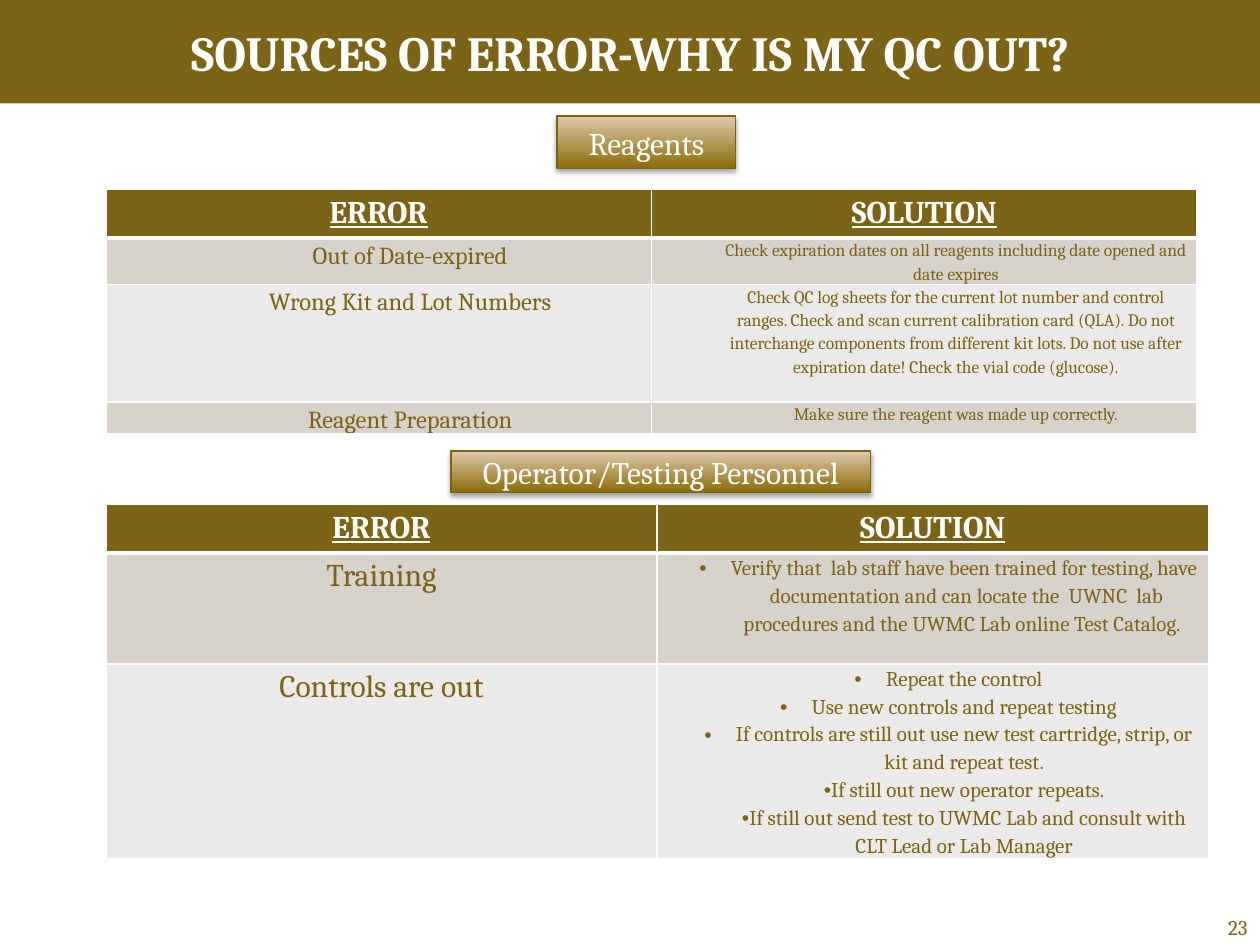
from dataclasses import dataclass

from lxml.etree import SubElement
from pptx import Presentation
from pptx.dml.color import RGBColor
from pptx.enum.shapes import MSO_SHAPE
from pptx.enum.text import MSO_ANCHOR, PP_ALIGN
from pptx.oxml import parse_xml
from pptx.oxml.ns import nsdecls, qn
from pptx.util import Inches, Pt

FONT = "Cambria"
BRONZE = RGBColor(0x7C, 0x63, 0x16)
OUTLINE = RGBColor(0x7C, 0x62, 0x13)
GRADIENT_DARK = RGBColor(0x8B, 0x6B, 0x07)
GRADIENT_LIGHT = RGBColor(0xDE, 0xC9, 0xAB)
BAND_DARK = RGBColor(0xD7, 0xD3, 0xCC)
BAND_LIGHT = RGBColor(0xEC, 0xEA, 0xE8)
WHITE = RGBColor(0xFF, 0xFF, 0xFF)


@dataclass
class Label:
    text: str
    left: float
    top: float
    width: float
    height: float


@dataclass
class Entry:
    lines: list[str]
    size: int
    indent: float = 0.5
    bulleted: bool = False
    hanging: int = 0  # how many leading bullets hang outside their text


@dataclass
class ErrorTable:
    top: float
    width: float
    heights: list[float]
    rows: list[tuple[Entry, Entry]]


LABELS = [
    Label("Reagents", 4.42, 0.92, 1.42, 0.42),
    Label("Operator/Testing Personnel", 3.58, 3.58, 3.33, 0.33),
]

TABLES = [
    ErrorTable(1.5, 8.66, [0.38, 0.37, 0.93, 0.25], [
        (Entry(["Out of Date-expired"], 14),
         Entry(["Check expiration dates on all reagents including date opened "
                "and date expires"], 10)),
        (Entry(["Wrong Kit and Lot Numbers"], 14),
         Entry(["Check QC log sheets for the current lot number and control "
                "ranges. Check and scan current calibration card (QLA). Do not "
                "interchange components from different kit lots. Do not use "
                "after expiration date! Check the vial code (glucose)."], 10)),
        (Entry(["Reagent Preparation"], 14),
         Entry(["Make sure the reagent was made up correctly."], 10)),
    ]),
    ErrorTable(4, 8.75, [0.38, 0.88, 1.55], [
        (Entry(["Training"], 18, indent=0),
         Entry(["Verify that  lab staff have been trained for testing, have  "
                "documentation and can locate the  UWNC  lab procedures and "
                "the UWMC Lab online Test Catalog. "],
               12, bulleted=True, hanging=1)),
        (Entry(["Controls are out"], 18, indent=0),
         Entry(["Repeat the control",
                "Use new controls and repeat testing",
                "If controls are still out use new test cartridge, strip, or "
                "kit and repeat test.",
                "If still out new operator repeats.",
                "If still out send test to UWMC Lab and consult with CLT Lead "
                "or Lab Manager"],
               12, bulleted=True, hanging=3)),
    ]),
]


def style(paragraph, size: int, color: RGBColor, bold: bool = False,
          underline: bool = False, align=PP_ALIGN.CENTER) -> None:
    paragraph.alignment = align
    for run in paragraph.runs:
        font = run.font
        font.name, font.size = FONT, Pt(size)
        font.bold, font.underline = bold, underline
        font.color.rgb = color


def set_insets(frame, left: float, top: float, right: float, bottom: float) -> None:
    frame.margin_left, frame.margin_top = Inches(left), Inches(top)
    frame.margin_right, frame.margin_bottom = Inches(right), Inches(bottom)


def paint_cell(cell, fill: RGBColor, top: int = 1, bottom: int = 1) -> None:
    """Fill the cell and give it white borders, widths in points."""
    cell.fill.solid()
    cell.fill.fore_color.rgb = fill
    properties = cell._tc.get_or_add_tcPr()
    widths = {"lnL": 1, "lnR": 1, "lnT": top, "lnB": bottom}
    for index, (tag, width) in enumerate(widths.items()):
        properties.insert(index, parse_xml(
            f'<a:{tag} {nsdecls("a")} w="{Pt(width)}"><a:solidFill>'
            f'<a:srgbClr val="{WHITE}"/></a:solidFill></a:{tag}>'))


def write_entry(cell, entry: Entry) -> None:
    set_insets(cell, 0.07, 0, 0.07, 0)
    cell.text_frame.text = "\n".join(entry.lines)
    for index, paragraph in enumerate(cell.text_frame.paragraphs):
        properties = paragraph._p.get_or_add_pPr()
        hang = 0.25 if index < entry.hanging else 0
        properties.set("marL", str(Inches(entry.indent)))
        properties.set("indent", str(-Inches(hang)))
        if entry.bulleted:
            SubElement(properties, qn("a:buFont"), typeface="Arial")
            SubElement(properties, qn("a:buChar"), char="•")
        paragraph.line_spacing = 1.15
        style(paragraph, entry.size, BRONZE)


def draw_table(slide, spec_table: ErrorTable) -> None:
    heights = spec_table.heights
    table = slide.shapes.add_table(
        len(heights), 2, Inches(0.84), Inches(spec_table.top),
        Inches(spec_table.width), Inches(sum(heights))).table
    table.horz_banding = False
    for row, height in zip(table.rows, heights):
        row.height = Inches(height)
    for column, heading in enumerate(("ERROR", "SOLUTION")):
        cell = table.cell(0, column)
        cell.text_frame.text = heading
        style(cell.text_frame.paragraphs[0], 18, WHITE, bold=True, underline=True)
        paint_cell(cell, BRONZE, bottom=3)
    for number, entries in enumerate(spec_table.rows, start=1):
        for column, entry in enumerate(entries):
            cell = table.cell(number, column)
            write_entry(cell, entry)
            paint_cell(cell, BAND_DARK if number % 2 else BAND_LIGHT,
                       top=3 if number == 1 else 1)


def draw_label(slide, label: Label) -> None:
    shape = slide.shapes.add_shape(
        MSO_SHAPE.RECTANGLE, Inches(label.left), Inches(label.top),
        Inches(label.width), Inches(label.height))
    shape.fill.gradient()
    shape.fill.gradient_angle = 90
    for stop, color in zip(shape.fill.gradient_stops, (GRADIENT_DARK, GRADIENT_LIGHT)):
        stop.color.rgb = color
    shape.line.color.rgb = OUTLINE
    shape.line.width = Pt(0.75)
    shape.element.spPr.append(parse_xml(
        f'<a:effectLst {nsdecls("a")}><a:outerShdw blurRad="{Pt(3.1)}" '
        f'dist="{Pt(1.8)}" dir="5400000" rotWithShape="0"><a:srgbClr val="000000">'
        '<a:alpha val="35000"/></a:srgbClr></a:outerShdw></a:effectLst>'))
    shape.text_frame.text = label.text
    shape.text_frame.vertical_anchor = MSO_ANCHOR.MIDDLE
    style(shape.text_frame.paragraphs[0], 18, WHITE)


def draw_title(slide) -> None:
    title = slide.shapes.title
    title.left, title.top = Inches(0.5), Inches(0)
    title.width, title.height = Inches(9), Inches(0.83)
    title.text_frame.text = "SOURCES OF ERROR-WHY IS MY QC OUT?"
    title.text_frame.vertical_anchor = MSO_ANCHOR.MIDDLE
    set_insets(title.text_frame, 0, 0, 0, 0)
    style(title.text_frame.paragraphs[0], 28, WHITE, bold=True)
    bar = slide.shapes.add_shape(MSO_SHAPE.RECTANGLE, 0, 0, Inches(10), Inches(0.82))
    bar.shadow.inherit = False
    bar.fill.solid()
    bar.fill.fore_color.rgb = BRONZE
    bar.line.fill.background()
    title.element.addprevious(bar.element)


def draw_page_number(slide) -> None:
    box = slide.shapes.add_textbox(Inches(9.25), Inches(7.25), Inches(0.75), Inches(0.26))
    frame = box.text_frame
    frame.word_wrap = True
    frame.vertical_anchor = MSO_ANCHOR.BOTTOM
    set_insets(frame, 0, 0, 0.1, 0.05)
    frame.text = "23"
    style(frame.paragraphs[0], 12, BRONZE, align=PP_ALIGN.RIGHT)


def main() -> None:
    presentation = Presentation()
    presentation.slide_width, presentation.slide_height = Inches(10), Inches(7.5)
    slide = presentation.slides.add_slide(presentation.slide_layouts[5])
    draw_title(slide)
    for error_table in TABLES:
        draw_table(slide, error_table)
    for label in LABELS:
        draw_label(slide, label)
    draw_page_number(slide)
    presentation.save("out.pptx")


if __name__ == "__main__":
    main()
